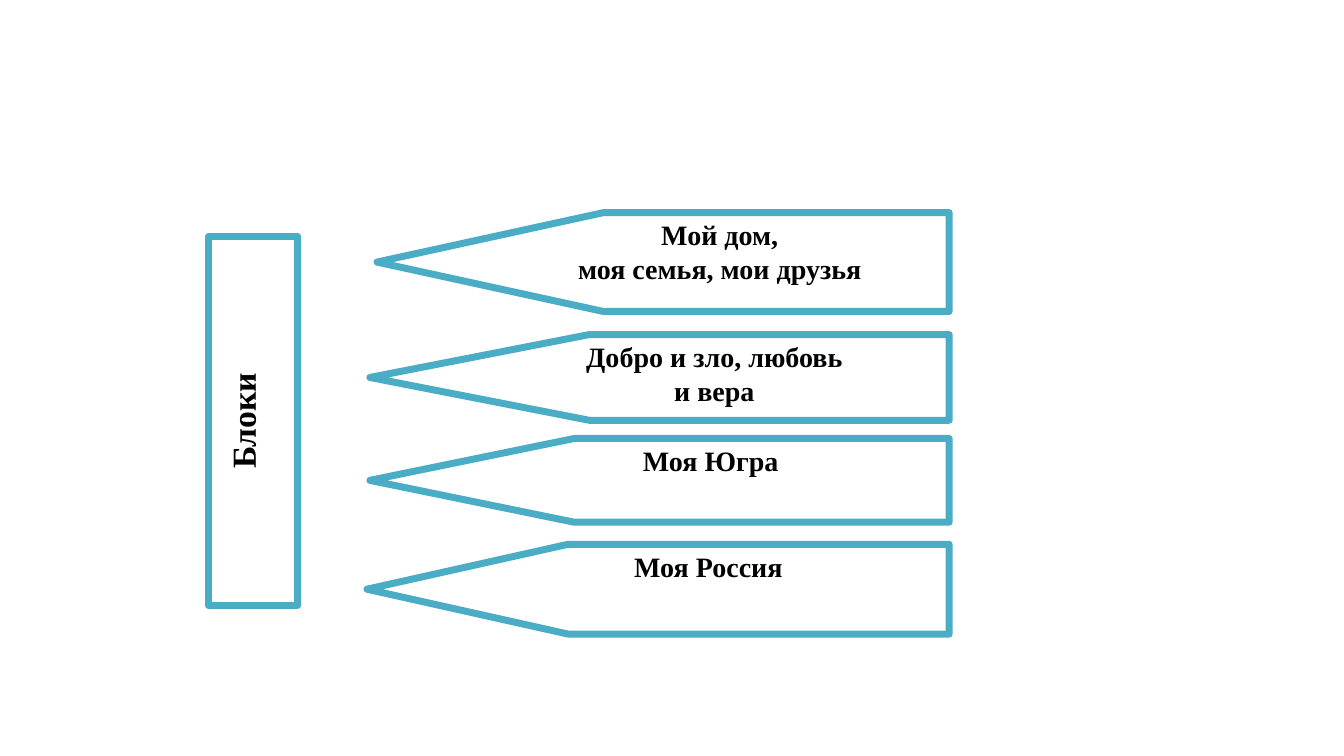
from pptx import Presentation
from pptx.dml.color import RGBColor
from pptx.enum.shapes import MSO_SHAPE
from pptx.enum.text import MSO_ANCHOR, PP_ALIGN
from pptx.util import Pt

WHITE = RGBColor(0xFF, 0xFF, 0xFF)
BLACK = RGBColor(0x00, 0x00, 0x00)
TEAL = RGBColor(0x4B, 0xAC, 0xC6)
PENTAGON = MSO_SHAPE.PENTAGON
PROCESS = MSO_SHAPE.FLOWCHART_PROCESS
TOP = MSO_ANCHOR.TOP
CENTER = PP_ALIGN.CENTER

BLANK_LAYOUT = 6
PLATE_RIGHT = 678
HALF_TURN = "10800000"
TOPICS = [
    (269.3, 151.9, 70.6, 2.29, ["Мой дом,", "моя семья, мои друзья"]),
    (264.2, 239, 61.2, 2.56, ["Добро и зло, любовь", "и вера"]),
    (264.2, 313.2, 59.8, 2.44, ["Моя Югра"]),
    (262.1, 388.8, 64.1, 2.24, ["Моя Россия"]),
]


def write_lines(shape, lines, size):
    """Write centred bold lines from the top of a shape."""
    frame = shape.text_frame
    frame.word_wrap = True
    frame.vertical_anchor = TOP
    font_format = {"name": "Times New Roman", "size": Pt(size), "bold": True}
    for index, line in enumerate(lines):
        para = frame.paragraphs[0] if index == 0 else frame.add_paragraph()
        para.alignment = CENTER
        span = para.add_run()
        span.text = line
        for name, value in font_format.items():
            setattr(span.font, name, value)
        span.font.color.rgb = BLACK


def add_outlined(page, kind, bounds, rotation):
    """Add a rotated white shape with a thick teal outline."""
    shape = page.shapes.add_shape(kind, *map(Pt, bounds))
    shape.rotation = rotation
    shape.shadow.inherit = False
    shape.fill.solid()
    shape.fill.fore_color.rgb = WHITE
    shape.line.color.rgb = TEAL
    shape.line.width = Pt(5)
    return shape


def add_topic(page, left, top, height, point, lines):
    """Add a plate pointing left with upright text."""
    bounds = (left, top, PLATE_RIGHT - left, height)
    plate = add_outlined(page, PENTAGON, bounds, 180)
    plate.adjustments[0] = point
    write_lines(plate, lines, 20)
    plate.text_frame._txBody.bodyPr.set("rot", HALF_TURN)


def add_heading(page):
    """Add the upright block that names the group of topics."""
    block = add_outlined(page, PROCESS, (49, 268.6, 263.5, 64.1), 270)
    write_lines(block, ["Блоки"], 24)
    block.text_frame.margin_top = Pt(10)


def main():
    """Build and save the slide."""
    deck = Presentation()
    deck.slide_width, deck.slide_height = Pt(960), Pt(540)
    page = deck.slides.add_slide(deck.slide_layouts[BLANK_LAYOUT])
    for topic in TOPICS:
        add_topic(page, *topic)
    add_heading(page)
    deck.save("out.pptx")


if __name__ == "__main__":
    main()
